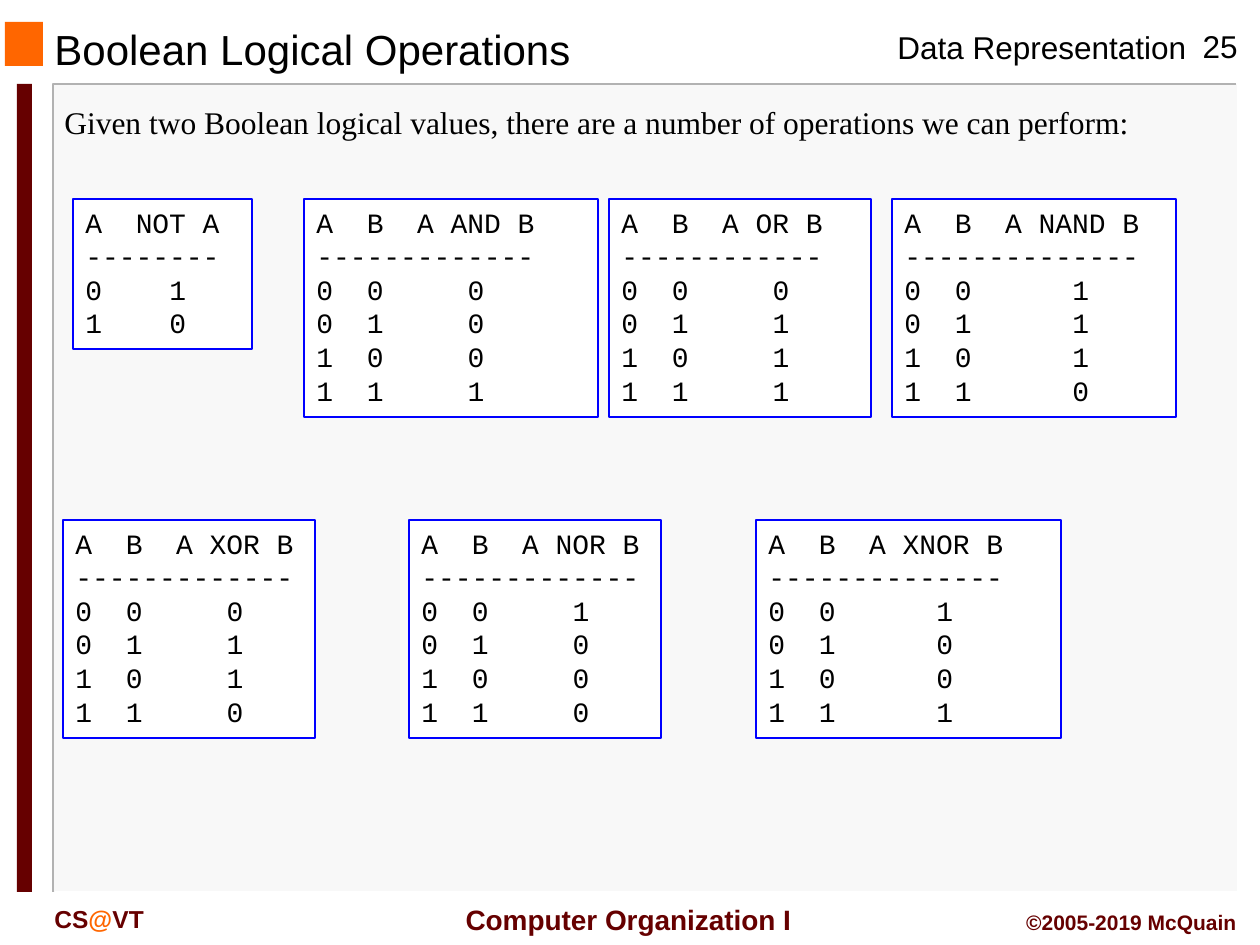
from dataclasses import dataclass
from itertools import product

from lxml.etree import SubElement
from pptx import Presentation
from pptx.dml.color import RGBColor
from pptx.enum.shapes import MSO_SHAPE as Shape
from pptx.enum.text import MSO_ANCHOR as Anchor, MSO_AUTO_SIZE as AutoSize, PP_ALIGN as Align
from pptx.oxml.ns import qn
from pptx.util import Emu, Pt

EMU_PER_PX = 914400 / 126


def px(n: float) -> Emu:
    return Emu(round(n * EMU_PER_PX))


@dataclass(frozen=True)
class Theme:
    black: str = "000000"
    white: str = "FFFFFF"
    panel: str = "F8F8F8"
    edge: str = "B2B2B2"
    orange: str = "FF6600"
    maroon: str = "660000"
    blue: str = "0000FF"
    sans: str = "Arial"
    serif: str = "Times New Roman"
    mono: str = "Courier New"
    title_size: int = 24
    body_size: int = 18
    table_size: int = 16
    course_size: int = 16
    dept_size: int = 14
    credit_size: int = 12


THEME = Theme()


@dataclass(frozen=True)
class Box:
    x: int
    y: int
    w: int
    h: int


@dataclass(frozen=True)
class Label:
    box: Box
    runs: tuple[tuple[str, str], ...]  # (text, colour)
    size: int
    font: str = THEME.sans
    bold: bool = False
    align: Align = Align.LEFT
    anchor: Anchor = Anchor.TOP
    wrap: bool = True


@dataclass(frozen=True)
class TruthTable:
    x: int
    y: int
    w: int
    inputs: str
    label: str
    results: str


def rgb(color: str) -> RGBColor:
    return RGBColor.from_string(color)


def add_rect(shapes, box: Box, fill: str, line: str | None = None):
    sp = shapes.add_shape(Shape.RECTANGLE, px(box.x), px(box.y), px(box.w), px(box.h))
    sp.shadow.inherit = False
    sp.fill.solid()
    sp.fill.fore_color.rgb = rgb(fill)
    if line:
        sp.line.color.rgb = rgb(line)
        sp.line.width = Pt(1.5)
    else:
        sp.line.fill.background()
    return sp


def add_edge(shapes, points: list[tuple[int, int]], color: str) -> None:
    builder = shapes.build_freeform(*points[0], scale=EMU_PER_PX)
    builder.add_line_segments(points[1:], close=False)
    sp = builder.convert_to_shape()
    sp.shadow.inherit = False
    sp.fill.background()
    sp.line.color.rgb = rgb(color)
    sp.line.width = Pt(1)


def add_label(shapes, label: Label) -> None:
    box = label.box
    sp = shapes.add_textbox(px(box.x), px(box.y), px(box.w), px(box.h))
    tf = sp.text_frame
    tf.word_wrap = label.wrap
    tf.vertical_anchor = label.anchor
    p = tf.paragraphs[0]
    p.alignment = label.align
    p.font.name, p.font.size, p.font.bold = label.font, Pt(label.size), label.bold
    for text, color in label.runs:
        r = p.add_run()
        r.text = text
        r.font.color.rgb = rgb(color)


def set_tabs(p, columns: list[int]) -> None:
    """Put left tab stops at the given character columns."""
    char_width = Pt(THEME.table_size * 0.6)
    tabs = SubElement(p._p.get_or_add_pPr(), qn("a:tabLst"))
    for column in columns:
        SubElement(tabs, qn("a:tab"), pos=str(column * char_width), algn="l")


def add_truth_table(shapes, table: TruthTable) -> None:
    # Inputs stand three characters apart; results go under the label's middle
    starts = [3 * i for i in range(1, len(table.inputs) + 1)]
    result_column = starts[-1] + len(table.label) // 2
    header_tabs, row_tabs = starts, starts[:-1] + [result_column]

    lines = [
        ("\t".join([*table.inputs, table.label]), header_tabs),
        ("-" * (starts[-1] + len(table.label)), []),
    ]
    for values, result in zip(product("01", repeat=len(table.inputs)), table.results):
        lines.append(("\t".join([*values, result]), row_tabs))

    box = Box(table.x, table.y, table.w, 14 + 34 * len(lines))
    tf = add_rect(shapes, box, THEME.white, THEME.blue).text_frame
    tf.word_wrap = True
    tf.auto_size = AutoSize.SHAPE_TO_FIT_TEXT
    tf.vertical_anchor = Anchor.TOP
    for i, (text, columns) in enumerate(lines):
        p = tf.paragraphs[0] if i == 0 else tf.add_paragraph()
        p.text = text
        p.alignment = Align.LEFT
        if columns:
            set_tabs(p, columns)
        p.font.name, p.font.size = THEME.mono, Pt(THEME.table_size)
        p.font.color.rgb = rgb(THEME.black)


TOP_ROW, BOTTOM_ROW = 199, 520

TABLES = [
    TruthTable(73, TOP_ROW, 179, "A", "NOT A", "10"),
    TruthTable(304, TOP_ROW, 294, "AB", "A AND B", "0001"),
    TruthTable(609, TOP_ROW, 262, "AB", "A OR B", "0111"),
    TruthTable(892, TOP_ROW, 284, "AB", "A NAND B", "1110"),
    TruthTable(63, BOTTOM_ROW, 252, "AB", "A XOR B", "0110"),
    TruthTable(409, BOTTOM_ROW, 252, "AB", "A NOR B", "1000"),
    TruthTable(756, BOTTOM_ROW, 305, "AB", "A XNOR B", "1001"),
]

LABELS = [
    # Header
    Label(Box(42, 25, 798, 48), (("Boolean Logical Operations", THEME.black),),
          THEME.title_size, anchor=Anchor.MIDDLE),
    Label(Box(885, 22, 317, 50), (("Data Representation", THEME.black),),
          THEME.body_size, wrap=False),
    Label(Box(1178, 21, 84, 50), (("25", THEME.black),),
          THEME.body_size, align=Align.CENTER),
    # Introduction
    Label(Box(52, 97, 1187, 50),
          (("Given two Boolean logical values, there are a number of operations we can perform:",
            THEME.black),),
          THEME.body_size, THEME.serif),
    # Footer
    Label(Box(42, 898, 189, 42),
          (("CS", THEME.maroon), ("@", THEME.orange), ("VT", THEME.maroon)),
          THEME.dept_size, bold=True),
    Label(Box(445, 896, 367, 47), (("Computer Organization I", THEME.maroon),),
          THEME.course_size, bold=True, align=Align.CENTER, anchor=Anchor.MIDDLE, wrap=False),
    Label(Box(987, 903, 262, 38), (("©2005-2019 McQuain", THEME.maroon),),
          THEME.credit_size, bold=True, align=Align.RIGHT),
]


def main() -> None:
    prs = Presentation()
    prs.slide_width, prs.slide_height = px(1260), px(945)
    shapes = prs.slides.add_slide(prs.slide_layouts[6]).shapes

    # Content panel with its edges
    add_rect(shapes, Box(54, 84, 1184, 808), THEME.panel)
    add_edge(shapes, [(1236, 84), (53, 84), (53, 892)], THEME.edge)
    add_edge(shapes, [(1238, 84), (1238, 892), (55, 892)], THEME.white)

    # Accent square and side bar
    add_rect(shapes, Box(5, 22, 38, 44), THEME.orange)
    add_rect(shapes, Box(17, 84, 15, 808), THEME.maroon)

    for label in LABELS:
        add_label(shapes, label)
    for table in TABLES:
        add_truth_table(shapes, table)

    prs.save("out.pptx")


if __name__ == "__main__":
    main()
